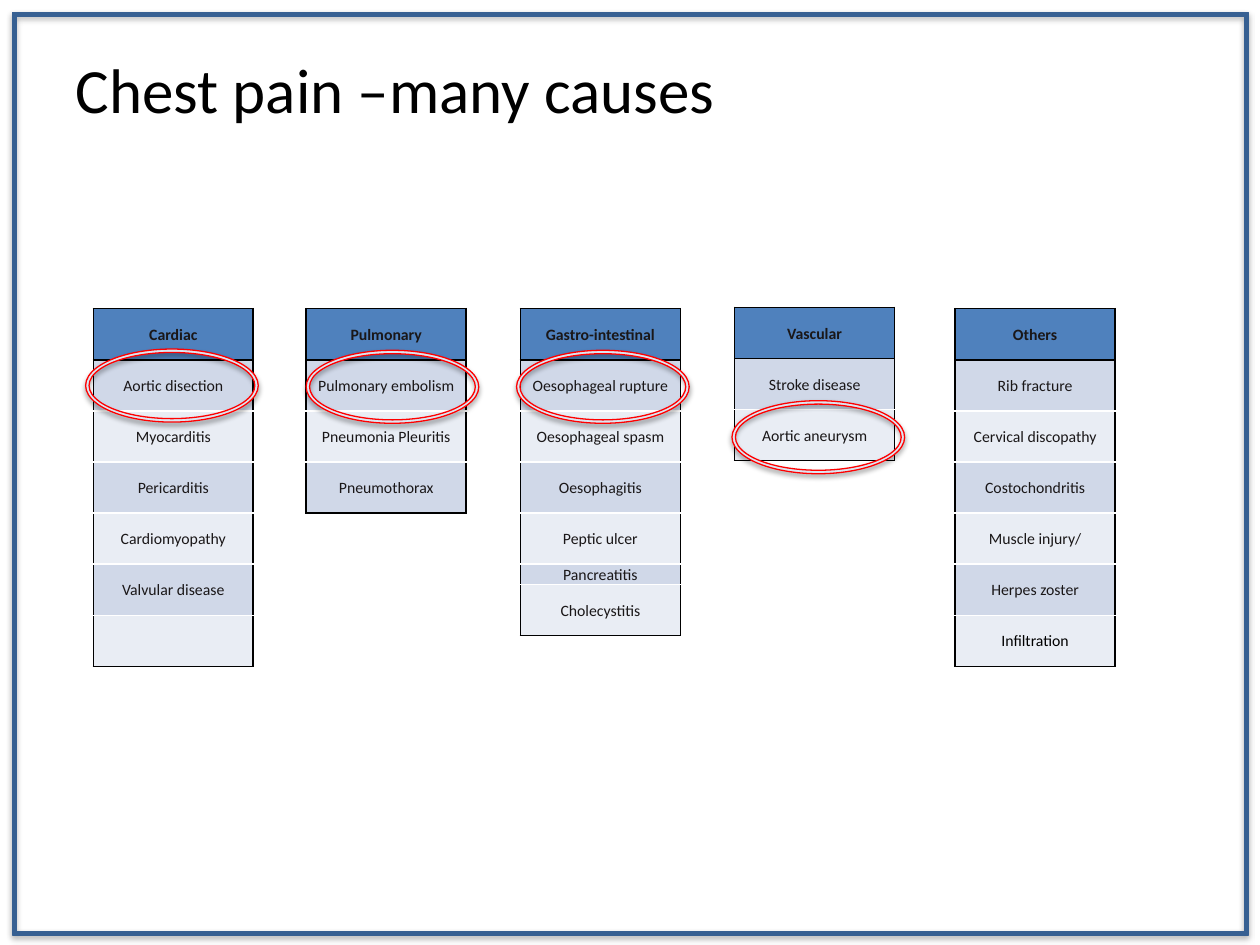
"""Build a slide that groups the many causes of chest pain."""
from lxml import etree
from pptx import Presentation
from pptx.dml.color import RGBColor
from pptx.enum.shapes import MSO_SHAPE
from pptx.enum.text import MSO_ANCHOR, PP_ALIGN
from pptx.oxml.ns import qn
from pptx.util import Inches, Pt

FRAME, DONUT = MSO_SHAPE.FRAME, MSO_SHAPE.DONUT
MIDDLE = MSO_ANCHOR.MIDDLE
LEFT, CENTER = PP_ALIGN.LEFT, PP_ALIGN.CENTER

BLACK = RGBColor(0x00, 0x00, 0x00)
WHITE = RGBColor(0xFF, 0xFF, 0xFF)
INK = RGBColor(0x1A, 0x17, 0x18)
NAVY = RGBColor(0x37, 0x60, 0x92)
HEADER_BLUE = RGBColor(0x4F, 0x81, 0xBD)
BAND_DARK = RGBColor(0xD0, 0xD8, 0xE8)
BAND_LIGHT = RGBColor(0xE9, 0xED, 0xF4)
RING_FILL = RGBColor(0xDC, 0xE6, 0xF2)
RED = RGBColor(0xFF, 0x00, 0x00)

FONT = "Calibri"
COLUMN_WIDTH = Inches(1.27)
ROW_HEIGHT = Pt(29.2)
SHORT_ROW_HEIGHT = Inches(0.16)
SHORT_ROW = "Pancreatitis"
BLACK_ENTRY = "Infiltration"
RING_SIZE = (1.37, 0.58)

CAUSES = [
    (0.74, 2.45, ["Cardiac", "Aortic disection", "Myocarditis", "Pericarditis",
                  "Cardiomyopathy", "Valvular disease", ""]),
    (2.43, 2.45, ["Pulmonary", "Pulmonary embolism", "Pneumonia Pleuritis",
                  "Pneumothorax"]),
    (4.13, 2.45, ["Gastro-intestinal", "Oesophageal rupture", "Oesophageal spasm",
                  "Oesophagitis", "Peptic ulcer", SHORT_ROW, "Cholecystitis"]),
    (7.58, 2.45, ["Others", "Rib fracture", "Cervical discopathy", "Costochondritis",
                  "Muscle injury/", "Herpes zoster", BLACK_ENTRY]),
    (5.83, 2.44, ["Vascular", "Stroke disease", "Aortic aneurysm"]),
]
RINGS = [(0.68, 2.77), (2.43, 2.78), (4.10, 2.78), (5.81, 3.18)]


def add_span(para, text, size, color, bold=False):
    """Add one formatted run to a paragraph."""
    span = para.add_run()
    span.text = text
    span.font.name = FONT
    span.font.size = Pt(size)
    span.font.bold = bold
    span.font.color.rgb = color


def add_title(page, text):
    """Place and fill the title placeholder."""
    box = page.shapes.title
    box.left, box.top, box.width, box.height = map(Inches, (0.5, 0.08, 9, 1.25))
    box.text_frame.vertical_anchor = MIDDLE
    para = box.text_frame.paragraphs[0]
    para.alignment = LEFT
    add_span(para, text, 36, BLACK)


def add_shadow(shape):
    """Give a shape a soft shadow below it."""
    effects = etree.SubElement(shape._element.spPr, qn("a:effectLst"))
    shadow = etree.SubElement(
        effects, qn("a:outerShdw"), blurRad=str(Pt(3.1)), dist=str(Pt(1.8)),
        dir="5400000", rotWithShape="0")
    color = etree.SubElement(shadow, qn("a:srgbClr"), val=str(BLACK))
    etree.SubElement(color, qn("a:alpha"), val="35000")


def add_outline(page, kind, place, thickness, fill, line):
    """Add a hollow preset shape with a shadow."""
    shape = page.shapes.add_shape(kind, *map(Inches, place))
    shape.adjustments[0] = thickness
    shape.fill.solid()
    shape.fill.fore_color.rgb = fill
    shape.line.color.rgb = line
    shape.line.width = Pt(0.75)
    add_shadow(shape)


def set_borders(cell, top, bottom):
    """Draw black sides and the given top and bottom borders."""
    properties = cell._tc.get_or_add_tcPr()
    for side, color in (("L", BLACK), ("R", BLACK), ("T", top), ("B", bottom)):
        line = etree.SubElement(properties, qn(f"a:ln{side}"), w=str(Pt(1)))
        fill = etree.SubElement(line, qn("a:solidFill"))
        etree.SubElement(fill, qn("a:srgbClr"), val=str(color))


def fill_cell(cell, text, index, last):
    """Format one cell according to its row in the table."""
    header = index == 0
    set_borders(cell, BLACK if index <= 1 else WHITE,
                BLACK if index in (0, last) else WHITE)
    cell.fill.solid()
    band = BAND_DARK if index % 2 else BAND_LIGHT
    cell.fill.fore_color.rgb = HEADER_BLUE if header else band
    cell.vertical_anchor = MIDDLE
    cell.margin_left = cell.margin_right = cell.margin_top = Inches(0.01)
    cell.margin_bottom = 0
    if text:
        para = cell.text_frame.paragraphs[0]
        para.alignment = CENTER
        add_span(para, text, 9, BLACK if text == BLACK_ENTRY else INK, header)


def add_causes(page, left, top, entries):
    """Add a one-column table with a header and its causes."""
    heights = [SHORT_ROW_HEIGHT if text == SHORT_ROW else ROW_HEIGHT
               for text in entries]
    table = page.shapes.add_table(len(entries), 1, Inches(left), Inches(top),
                                  COLUMN_WIDTH, sum(heights)).table
    table.first_row = table.horz_banding = False
    for index, (text, height) in enumerate(zip(entries, heights)):
        table.rows[index].height = height
        fill_cell(table.cell(index, 0), text, index, len(entries) - 1)


def main():
    """Build and save the slide."""
    deck = Presentation()
    deck.slide_width, deck.slide_height = Inches(10), Inches(7.5)
    page = deck.slides.add_slide(deck.slide_layouts[5])
    add_title(page, "Chest pain –many causes")
    add_outline(page, FRAME, (0.1, 0.1, 9.81, 7.32), 0.004, NAVY, NAVY)
    for left, top, entries in CAUSES:
        add_causes(page, left, top, entries)
    for corner in RINGS:
        add_outline(page, DONUT, corner + RING_SIZE, 0.047, RING_FILL, RED)
    deck.save("out.pptx")


if __name__ == "__main__":
    main()
